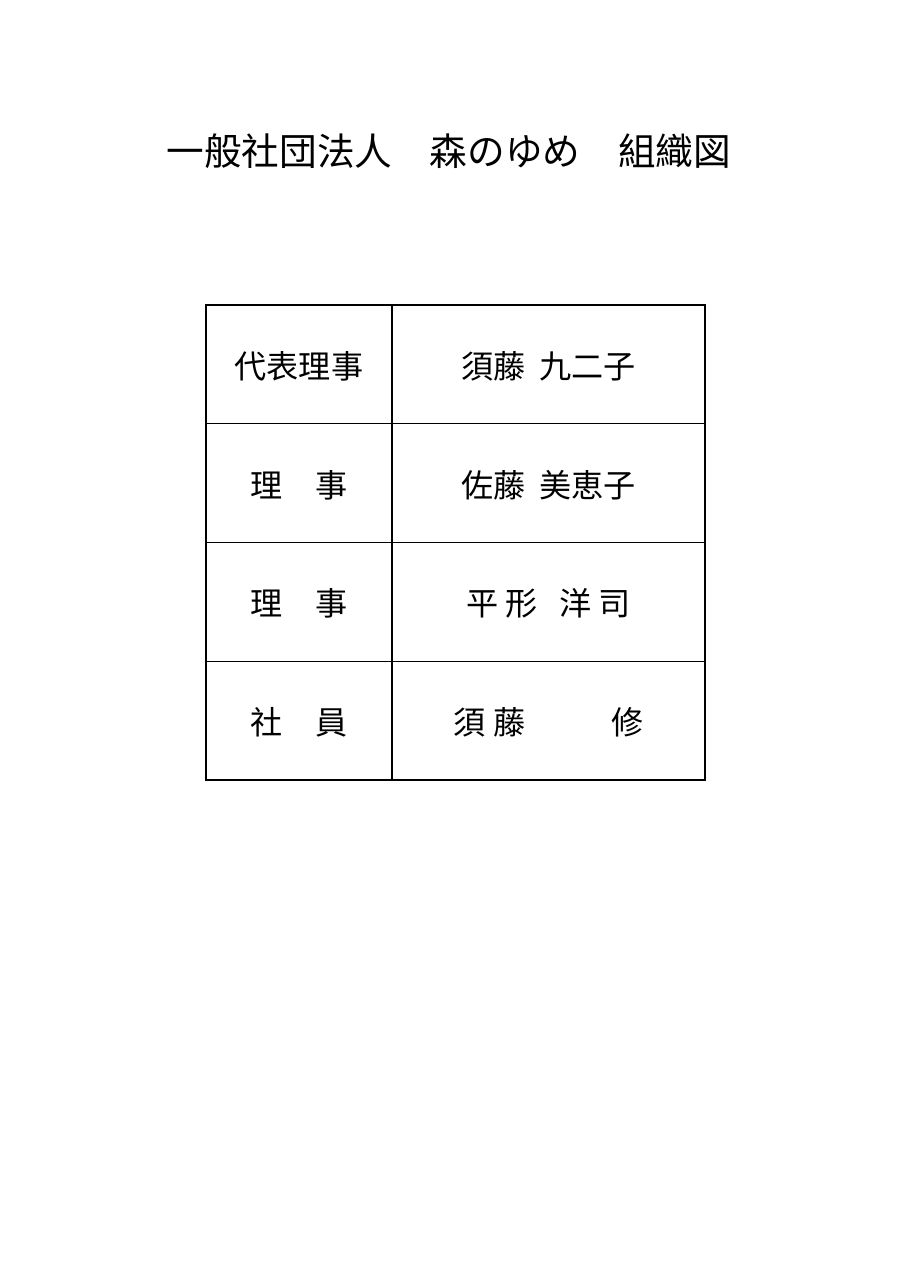
from dataclasses import dataclass

from pptx import Presentation
from pptx import util as u
from pptx.dml.color import RGBColor
from pptx.enum import text
from pptx.oxml import parse_xml
from pptx.oxml.ns import nsdecls, qn


@dataclass(frozen=True)
class Theme:
    ink: str = "000000"
    paper: str = "FFFFFF"
    font: str = "Noto Sans CJK JP"
    title_size: float = 24.6
    cell_size: float = 21
    border: float = 1


class Chart:
    def __init__(self, slide, theme):
        self.slide = slide
        self.theme = theme

    def add_words(self, paragraph, words, size, tracking=0):
        run = paragraph.add_run()
        run.text = words
        for key, value in {"size": u.Pt(size), "name": self.theme.font}.items():
            setattr(run.font, key, value)
        run.font.color.rgb = RGBColor.from_string(self.theme.ink)
        properties = run._r.get_or_add_rPr()
        east_asian = properties.makeelement(qn("a:ea"), {"typeface": self.theme.font})
        properties.append(east_asian)
        if tracking:
            properties.set("spc", str(round(tracking * 100)))

    def title(self, words, left, top, width, height):
        heading = self.slide.shapes.add_textbox(*map(u.Pt, (left, top, width, height)))
        frame = heading.text_frame
        layout = {"word_wrap": True, "vertical_anchor": text.MSO_ANCHOR.MIDDLE}
        for key, value in layout.items():
            setattr(frame, key, value)
        line = frame.paragraphs[0]
        for key, value in {"alignment": text.PP_ALIGN.CENTER, "line_spacing": 0.9}.items():
            setattr(line, key, value)
        self.add_words(line, words, self.theme.title_size)

    def borders(self, cell):
        properties = cell._tc.get_or_add_tcPr()
        for index, side in enumerate("LRTB"):
            properties.insert(index, parse_xml(
                f'<a:ln{side} {nsdecls("a")} w="{u.Pt(self.theme.border)}">'
                f'<a:solidFill><a:srgbClr val="{self.theme.ink}"/></a:solidFill>'
                f'</a:ln{side}>'))

    def cell(self, cell, pieces):
        layout = {
            "vertical_anchor": text.MSO_ANCHOR.MIDDLE,
            "margin_left": u.Pt(6.5), "margin_right": u.Pt(6.5),
            "margin_top": u.Pt(3), "margin_bottom": u.Pt(3),
        }
        for key, value in layout.items():
            setattr(cell, key, value)
        cell.fill.background()
        self.borders(cell)
        line = cell.text_frame.paragraphs[0]
        line.alignment = text.PP_ALIGN.CENTER
        for words, tracking in pieces:
            self.add_words(line, words, self.theme.cell_size, tracking)

    def table(self, members, left, top, widths, row_height):
        size = (sum(widths), row_height * len(members))
        frame = self.slide.shapes.add_table(
            len(members), len(widths), *map(u.Pt, (left, top, *size)))
        roster = frame.table
        for flag in ("first_row", "horz_banding"):
            setattr(roster, flag, False)
        for column, width in zip(roster.columns, widths):
            column.width = u.Pt(width)
        for row, (role, family, gap, given) in zip(roster.rows, members):
            row.height = u.Pt(row_height)
            self.cell(row.cells[0], [(role, 0)])
            self.cell(row.cells[1], [(family, 0), (" ", gap), (given, 0)])


def main():
    deck = Presentation()
    for key, value in {"slide_width": 595.44, "slide_height": 841.68}.items():
        setattr(deck, key, u.Pt(value))
    theme = Theme()
    slide = deck.slides.add_slide(deck.slide_layouts[6])
    slide.background.fill.solid()
    slide.background.fill.fore_color.rgb = RGBColor.from_string(theme.paper)
    chart = Chart(slide, theme)

    chart.title("一般社団法人　森のゆめ　組織図", 89.3, 46, 408.2, 108)
    members = [
        ("代表理事", "須藤", 4.7, "九二子"),
        ("理　事", "佐藤", 4.7, "美恵子"),
        ("理　事", "平 形", 9.4, "洋 司"),
        ("社　員", "須 藤", 51.4, "修"),
    ]
    chart.table(members, 134.6, 199.4, (121.7, 204.5), 77.6)
    deck.save("out.pptx")


if __name__ == "__main__":
    main()
